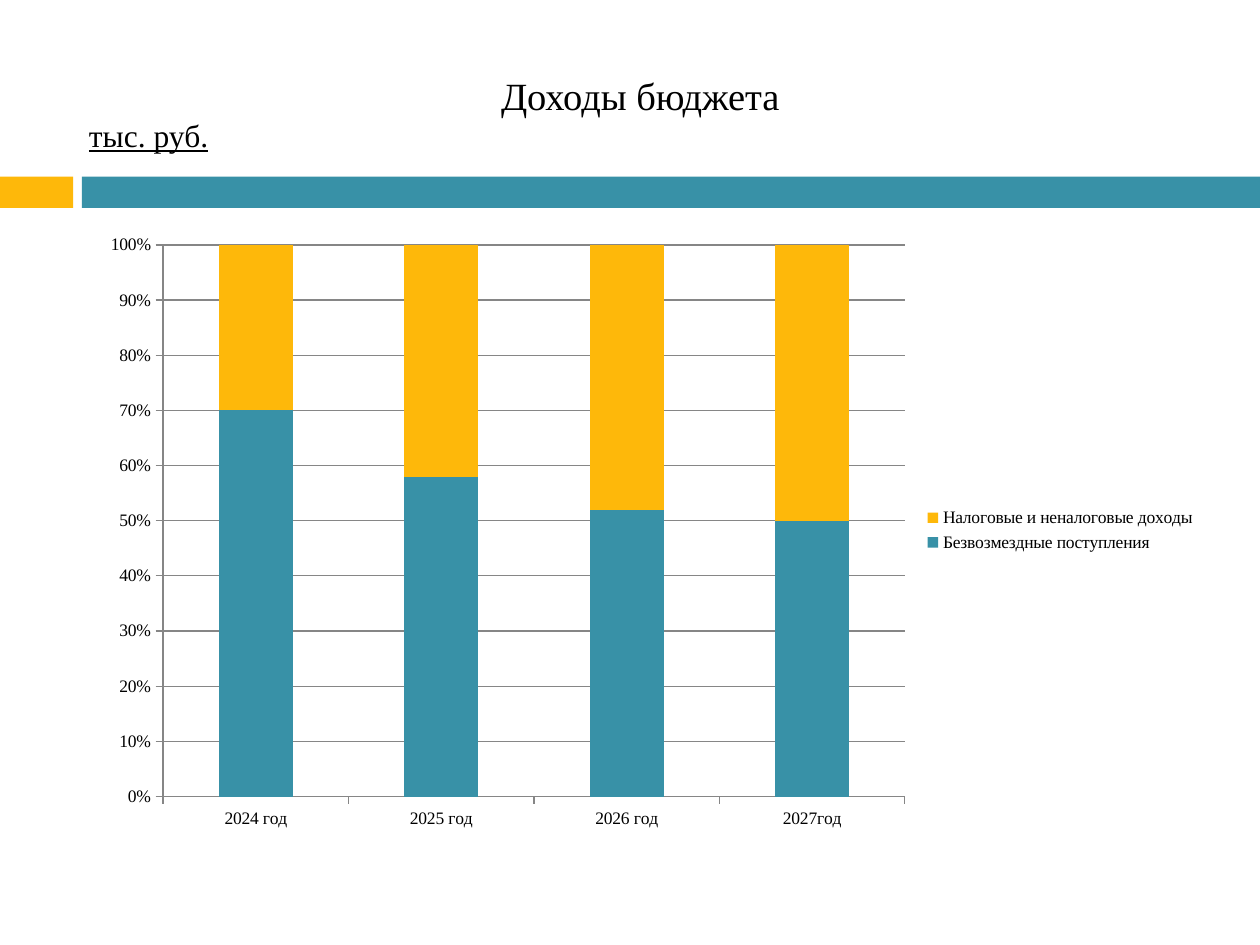
from lxml import etree
from pptx import Presentation
from pptx.chart.data import CategoryChartData
from pptx.dml.color import RGBColor
from pptx.enum.chart import XL_CHART_TYPE, XL_LEGEND_POSITION, XL_TICK_MARK
from pptx.enum.shapes import MSO_SHAPE
from pptx.enum.text import MSO_ANCHOR, PP_ALIGN
from pptx.oxml.ns import qn
from pptx.util import Inches, Pt

RECT = MSO_SHAPE.RECTANGLE
STACK = XL_CHART_TYPE.COLUMN_STACKED_100
RIGHT = XL_LEGEND_POSITION.RIGHT
OUT = XL_TICK_MARK.OUTSIDE
MIDDLE = MSO_ANCHOR.MIDDLE
CENTER = PP_ALIGN.CENTER

BLACK = RGBColor(0, 0, 0)
WHITE = RGBColor(255, 255, 255)
GOLD = RGBColor(0xFE, 0xB8, 0x0A)
TEAL = RGBColor(0x38, 0x91, 0xA7)
GRAY = RGBColor(0x86, 0x86, 0x86)
FONT = "Times New Roman"
WIDE, HIGH = Inches(10), Inches(7.5)

YEARS = ["2024 год", "2025 год", "2026 год", "2027год"]
SERIES = [
    ("Безвозмездные поступления", [70, 58, 52, 50], TEAL),
    ("Налоговые и неналоговые доходы", [30, 42, 48, 50], GOLD),
]


def share(box, x, y, w, h):
    left, top, wide, high = box
    return (left + int(wide * x), top + int(high * y),
            int(wide * w), int(high * h))


def style(font, size):
    font.name = FONT
    font.size = Pt(size)
    font.color.rgb = BLACK


def block(slide, box, color):
    shape = slide.shapes.add_shape(RECT, *box)
    shape.shadow.inherit = False
    shape.fill.solid()
    shape.fill.fore_color.rgb = color
    shape.line.fill.background()
    return shape


def write(shape, text, size):
    frame = shape.text_frame
    frame.word_wrap = True
    frame.vertical_anchor = MIDDLE
    para = frame.paragraphs[0]
    para.alignment = CENTER
    run = para.add_run()
    run.text = text
    style(run.font, size)
    return run


def add_band(slide, box):
    block(slide, share(box, 0, 0, 0.058, 1), GOLD)
    block(slide, share(box, 0.065, 0, 0.935, 1), TEAL)


def add_head(slide, box):
    title = slide.shapes.add_textbox(*share(box, 0.083, 0.26, 0.858, 0.56))
    write(title, "Доходы бюджета ", 22)
    unit = block(slide, share(box, 0.051, 0.65, 0.134, 0.23), WHITE)
    unit.line.color.rgb = WHITE
    unit.line.width = Pt(1.5)
    unit.text_frame.margin_left = unit.text_frame.margin_right = 0
    write(unit, "тыс. руб.", 18).font.underline = True


def set_plot(chart, x, y, w, h):
    area = chart._chartSpace.find(".//" + qn("c:plotArea"))
    for old in area.findall(qn("c:layout")):
        area.remove(old)
    layout = etree.Element(qn("c:layout"))
    area.insert(0, layout)
    manual = etree.SubElement(layout, qn("c:manualLayout"))
    rules = [("layoutTarget", "inner"), ("xMode", "edge"), ("yMode", "edge"),
             ("x", x), ("y", y), ("w", w), ("h", h)]
    for tag, val in rules:
        etree.SubElement(manual, qn("c:" + tag)).set("val", str(val))


def add_bars(slide, box):
    data = CategoryChartData()
    data.categories = YEARS
    for name, vals, _ in SERIES:
        data.add_series(name, vals)
    chart = slide.shapes.add_chart(STACK, *box, data).chart
    style(chart.font, 10)
    chart.has_title = False
    chart.has_legend = True
    chart.legend.position = RIGHT
    chart.legend.include_in_layout = False

    plot = chart.plots[0]
    plot.gap_width = 150
    plot.overlap = 100
    plot.vary_by_categories = False
    for bar, (_, _, color) in zip(plot.series, SERIES):
        bar.format.fill.solid()
        bar.format.fill.fore_color.rgb = color

    rows = chart.value_axis
    rows.has_major_gridlines = True
    rows.major_gridlines.format.line.color.rgb = GRAY
    rows.minimum_scale, rows.maximum_scale = 0, 1
    rows.major_unit = 0.1
    rows.tick_labels.number_format = "0%"
    rows.tick_labels.number_format_is_linked = False
    for axis in (chart.category_axis, rows):
        axis.major_tick_mark = OUT
        axis.format.line.color.rgb = GRAY
    set_plot(chart, 0.07, 0.04, 0.66, 0.89)


def main():
    deck = Presentation()
    deck.slide_width, deck.slide_height = WIDE, HIGH
    slide = deck.slides.add_slide(deck.slide_layouts[6])
    page = (0, 0, WIDE, HIGH)
    add_band(slide, share(page, 0, 0.187, 1, 0.033))
    add_head(slide, share(page, 0, 0, 1, 0.187))
    add_bars(slide, share(page, 0.067, 0.233, 0.892, 0.656))
    deck.save("out.pptx")


if __name__ == "__main__":
    main()
